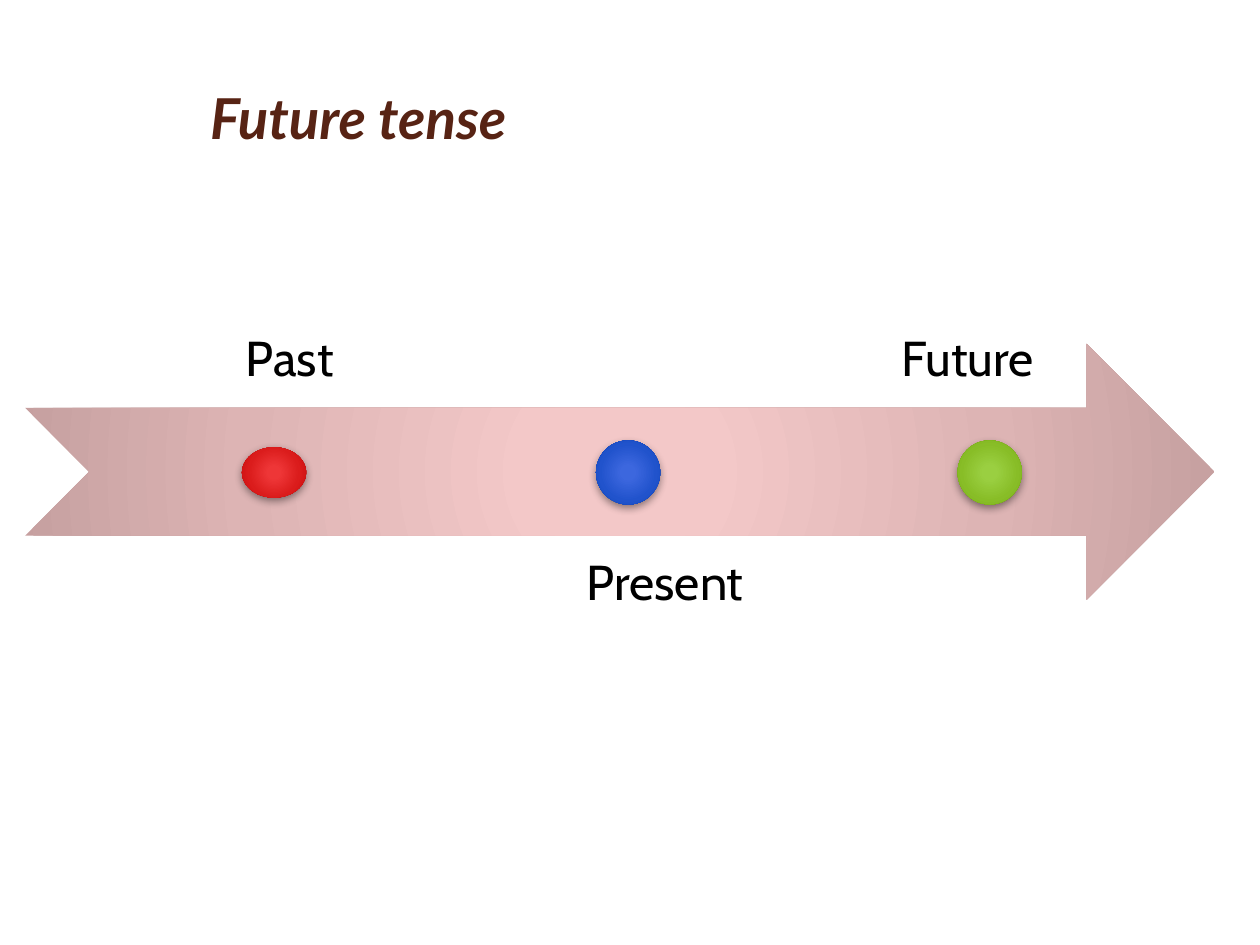
from lxml import etree
from pptx import Presentation
from pptx.dml.color import RGBColor
from pptx.enum.shapes import MSO_SHAPE
from pptx.enum.text import MSO_ANCHOR, PP_ALIGN
from pptx.oxml import parse_xml
from pptx.oxml.ns import nsdecls, qn
from pptx.util import Inches, Pt

ARROW = MSO_SHAPE.NOTCHED_RIGHT_ARROW
OVAL = MSO_SHAPE.OVAL
TOP, MIDDLE, BOTTOM = MSO_ANCHOR.TOP, MSO_ANCHOR.MIDDLE, MSO_ANCHOR.BOTTOM
LEFT, CENTER = PP_ALIGN.LEFT, PP_ALIGN.CENTER

STOPS = [0, 15, 62, 97, 100]
COLORS = {
    "title": "572314",
    "label": "000000",
    "shadow": "000000",
    "arrow": ["F4C9C9", "F3C8C8", "DDB4B4", "C7A1A1", "C69F9F"],
    "past": ["EF3737", "EE3637", "DB1C1C", "C70C0D", "C30001"],
    "present": ["3C67DF", "3C67DE", "2153CC", "1246B9", "0141BA"],
    "future": ["9AD041", "9ACF41", "88BD27", "79AB17", "77AC08"],
}


def add_radial_shape(slide, kind, left, top, width, height, colors):
    shape = slide.shapes.add_shape(
        kind, Inches(left), Inches(top), Inches(width), Inches(height))
    shape.shadow.inherit = False
    shape.line.fill.background()
    shape.fill.background()
    stops = "".join(
        f'<a:gs pos="{stop * 1000}"><a:srgbClr val="{color}"/></a:gs>'
        for stop, color in zip(STOPS, colors))
    gradient = parse_xml(
        f'<a:gradFill {nsdecls("a")} rotWithShape="1"><a:gsLst>{stops}</a:gsLst>'
        '<a:path path="circle"><a:fillToRect l="50000" t="50000" r="50000" b="50000"/>'
        '</a:path></a:gradFill>')
    properties = shape._element.spPr
    properties.replace(properties.find(qn("a:noFill")), gradient)
    return shape


def add_text(slide, text, box, anchor, alignment, font_name, size, color, inset=None):
    shape = slide.shapes.add_textbox(*[Inches(value) for value in box])
    frame = shape.text_frame
    frame.word_wrap = True
    frame.vertical_anchor = anchor
    if inset is not None:
        frame.margin_left = frame.margin_right = Inches(inset)
        frame.margin_top = frame.margin_bottom = Inches(inset)
    paragraph = frame.paragraphs[0]
    paragraph.alignment = alignment
    run = paragraph.add_run()
    run.text = text
    run.font.name = font_name
    run.font.size = Pt(size)
    run.font.color.rgb = RGBColor.from_string(color)
    return paragraph


presentation = Presentation()
presentation.slide_width = Inches(10)
presentation.slide_height = Inches(7.5)
slide = presentation.slides.add_slide(presentation.slide_layouts[6])

add_radial_shape(slide, ARROW, 0.2, 2.73, 9.44, 2.03, COLORS["arrow"])

arrow_middle = 3.75
dot_width = 0.51
moments = [
    ("Past", 0.93, 1.25, BOTTOM, 1.92, 0.4),
    ("Present", 3.91, 4.22, TOP, 4.73, 0.51),
    ("Future", 6.31, 1.25, BOTTOM, 7.6, 0.51),
]
for label, label_left, label_top, anchor, dot_left, dot_height in moments:
    paragraph = add_text(slide, label, (label_left, label_top, 2.74, 2.03), anchor,
                         CENTER, "Cabin", 28, COLORS["label"], 0.22)
    paragraph.line_spacing = 0.9
    dot = add_radial_shape(slide, OVAL, dot_left, arrow_middle - dot_height / 2,
                           dot_width, dot_height, COLORS[label.lower()])
    effects = dot._element.spPr.find(qn("a:effectLst"))
    shadow = etree.SubElement(
        effects, qn("a:outerShdw"), blurRad=str(Pt(5)), dist=str(Pt(2)),
        dir="5400000", rotWithShape="0")
    shadow_color = etree.SubElement(shadow, qn("a:srgbClr"), val=COLORS["shadow"])
    etree.SubElement(shadow_color, qn("a:alpha"), val="43000")

title = add_text(slide, "Future tense", (1.57, 0.3, 8.2, 1.25), MIDDLE,
                 LEFT, "Lato", 32.2, COLORS["title"])
title.runs[0].font.bold = True
title.runs[0].font.italic = True

presentation.save("out.pptx")
